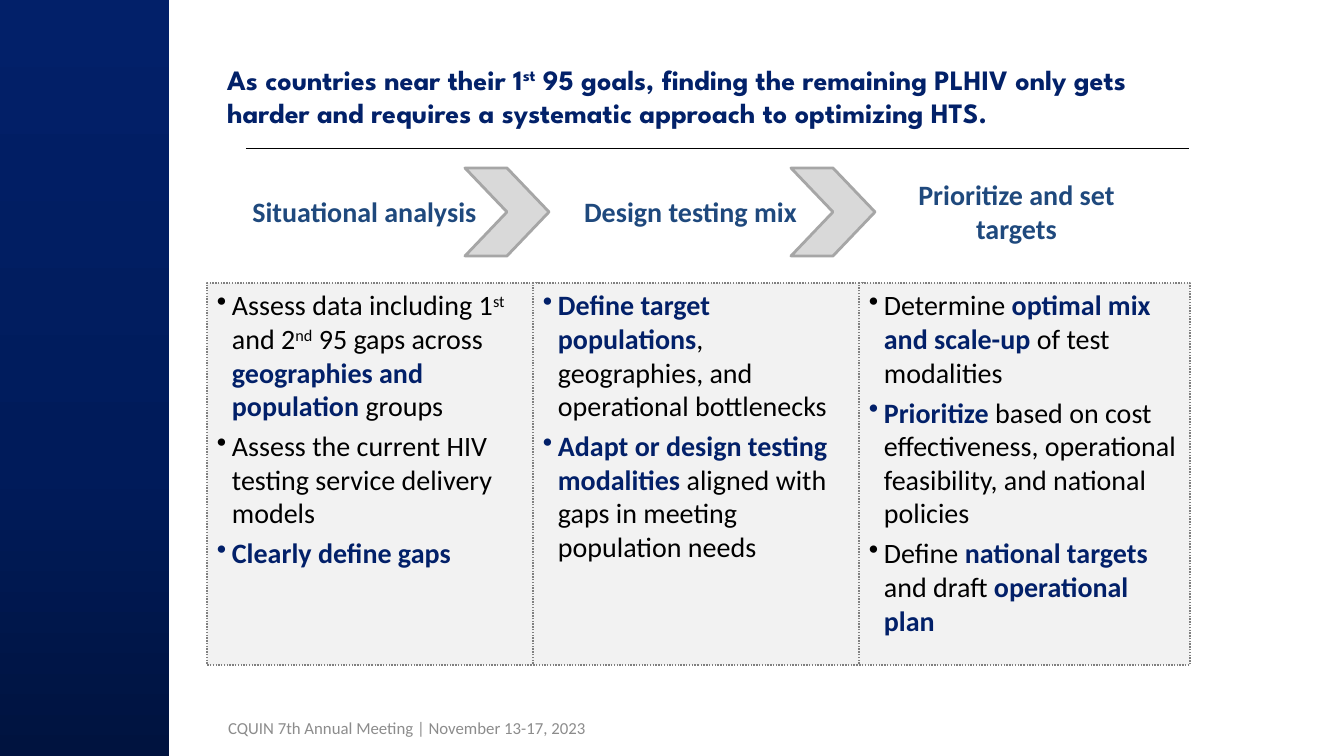
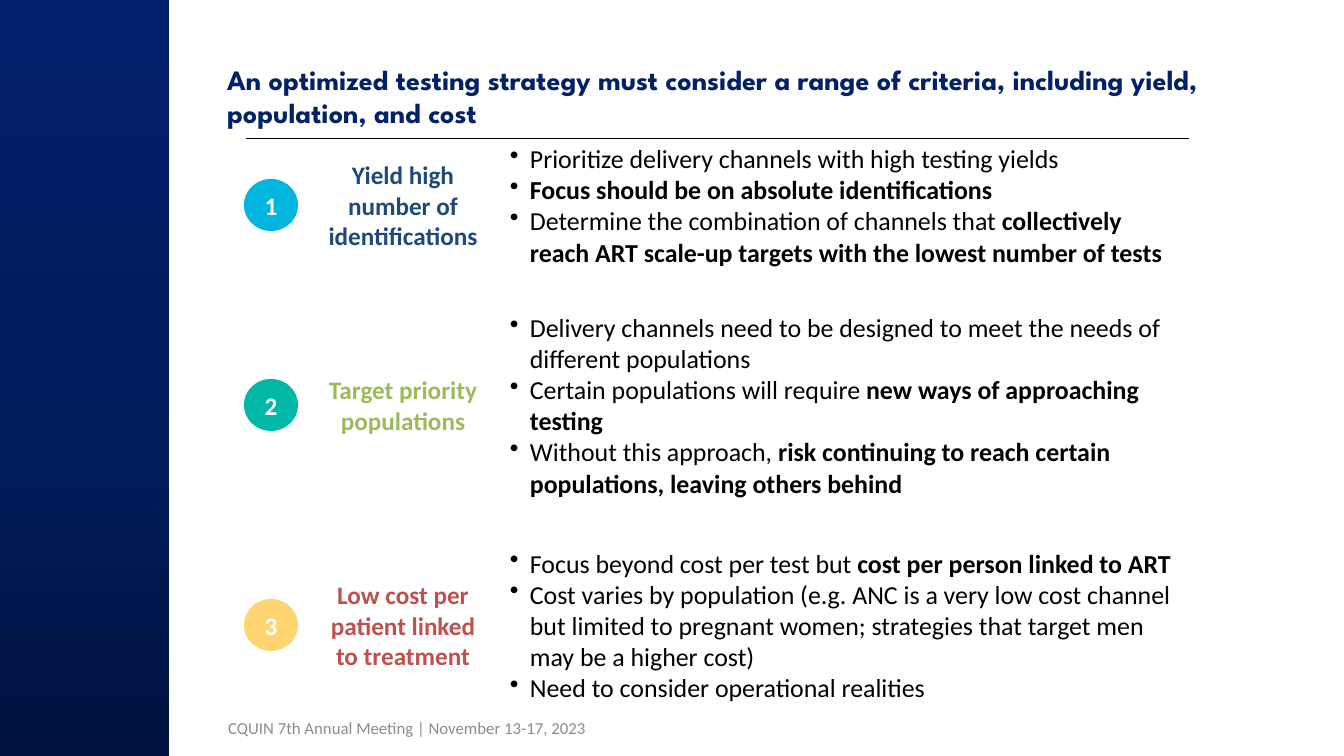
from copy import deepcopy

from lxml import etree
from pptx import Presentation
from pptx.dml.color import RGBColor
from pptx.enum.dml import MSO_LINE
from pptx.enum.shapes import MSO_CONNECTOR, MSO_SHAPE
from pptx.enum.text import MSO_ANCHOR, MSO_AUTO_SIZE, PP_ALIGN
from pptx.oxml.ns import qn
from pptx.util import Emu, Pt

RECT, CHEVRON, OVAL = MSO_SHAPE.RECTANGLE, MSO_SHAPE.CHEVRON, MSO_SHAPE.OVAL
TOP, MIDDLE = MSO_ANCHOR.TOP, MSO_ANCHOR.MIDDLE
LEFT, CENTER = PP_ALIGN.LEFT, PP_ALIGN.CENTER

PX = 914400 / 100.8  # EMU in one px

NAVY = RGBColor(0x02, 0x20, 0x69)
TITLE_NAVY = RGBColor(0x02, 0x21, 0x69)
BAND_STOPS = [(0, RGBColor(0x00, 0x13, 0x3F)), (0.38, RGBColor(0x00, 0x1B, 0x5A)), (1, NAVY)]
BLACK = RGBColor(0x00, 0x00, 0x00)
WHITE = RGBColor(0xFF, 0xFF, 0xFF)
FOOTER_GREY = RGBColor(0x8C, 0x8C, 0x8C)
HEADING_BLUE = RGBColor(0x1F, 0x49, 0x7D)
PANEL_FILL = RGBColor(0xF2, 0xF2, 0xF2)
PANEL_LINE = RGBColor(0x80, 0x80, 0x80)
CHEVRON_FILL = RGBColor(0xD9, 0xD9, 0xD9)
CHEVRON_LINE = RGBColor(0xA6, 0xA6, 0xA6)
CYAN = RGBColor(0x00, 0xB5, 0xDE)
TEAL = RGBColor(0x00, 0xB8, 0xA5)
YELLOW = RGBColor(0xFE, 0xD5, 0x71)
GREEN = RGBColor(0x9B, 0xBB, 0x59)
RED = RGBColor(0xC0, 0x50, 0x4D)

BODY_FONT, TITLE_FONT = "Calibri", "League Spartan"
FOOTER = "CQUIN 7th Annual Meeting | November 13-17, 2023"
STRONG, SUPER = "strong", "super"


def add_box(s, kind, x, y, w, h, fill=None, line=None, width=1):
    """Add a preset shape, or a text box when kind is None; lengths in px."""
    place = [Emu(round(v * PX)) for v in (x, y, w, h)]
    if kind is None:
        return s.shapes.add_textbox(*place)
    sp = s.shapes.add_shape(kind, *place)
    sp.shadow.inherit = False
    if fill is not None:
        sp.fill.solid()
        sp.fill.fore_color.rgb = fill
    if line is None:
        sp.line.fill.background()
    else:
        sp.line.color.rgb = line
        sp.line.width = Pt(width)
    return sp


def write(sp, paragraphs, size, color, strong=None, bold=False, font=BODY_FONT,
          align=CENTER, anchor=MIDDLE, indent=0, after=0):
    """Fill a shape; a paragraph lists strings or (string, STRONG or SUPER)."""
    tf = sp.text_frame
    tf.word_wrap = True
    tf.auto_size = MSO_AUTO_SIZE.NONE
    tf.vertical_anchor = anchor
    for i, parts in enumerate(paragraphs):
        p = tf.paragraphs[0] if i == 0 else tf.add_paragraph()
        p.alignment = align
        if indent:
            pPr = p._p.get_or_add_pPr()
            pPr.set("marL", str(round(indent * PX)))
            pPr.set("indent", str(-round(indent * PX)))
            etree.SubElement(pPr, qn("a:buChar")).set("char", "•")
        if after:
            p.space_after = Pt(after)
        for part in parts:
            text, style = part if isinstance(part, tuple) else (part, None)
            r = p.add_run()
            r.text = text
            r.font.name = font
            r.font.size = Pt(size)
            r.font.bold = bold or style == STRONG
            r.font.color.rgb = strong if style == STRONG else color
            if style == SUPER:
                r._r.get_or_add_rPr().set("baseline", "30000")


prs = Presentation()
prs.slide_width, prs.slide_height = Emu(round(1344 * PX)), Emu(round(756 * PX))

# Shared frame: title, side band, footer and rule
titles = [
    (["As countries near their 1", ("st", SUPER), " 95 goals, finding the remaining PLHIV "
      "only gets harder and requires a systematic approach to optimizing HTS."], 149),
    (["An optimized testing strategy must consider a range of criteria, including yield, "
      "population, and cost"], 139),
]
slides = []
for title, rule_y in titles:
    s = prs.slides.add_slide(prs.slide_layouts[5])
    slides.append(s)

    sp = s.shapes.title
    sp.left, sp.top, sp.width, sp.height = [Emu(round(v * PX)) for v in (217, 57, 1008, 93)]
    write(sp, [title], 20, TITLE_NAVY, bold=True, font=TITLE_FONT, align=LEFT, anchor=TOP)

    band = add_box(s, RECT, 0, 0, 169, 756)
    band.fill.gradient()
    band.fill.gradient_angle = 90
    stop_list = band._element.spPr.find(".//" + qn("a:gsLst"))
    stop_list.insert(1, deepcopy(stop_list[0]))
    for stop, (position, color) in zip(band.fill.gradient_stops, BAND_STOPS):
        stop.position = position
        stop.color.rgb = color

    write(add_box(s, None, 59, 708, 696, 40), [[FOOTER]], 12, FOOTER_GREY)

    ends = [Emu(round(v * PX)) for v in (246, rule_y, 1189, rule_y)]
    rule = s.shapes.add_connector(MSO_CONNECTOR.STRAIGHT, *ends)
    rule.line.color.rgb = BLACK
    rule.line.width = Pt(0.75)
    etree.SubElement(rule._element.spPr, qn("a:effectLst"))

# Slide 1: three steps, each a heading over a panel
steps = [
    ("Situational analysis", [
        ["Assess data including 1", ("st", SUPER), " and 2", ("nd", SUPER), " 95 gaps across ",
         ("geographies and population", STRONG), " groups"],
        ["Assess the current HIV testing service delivery models"],
        [("Clearly define gaps", STRONG)],
    ]),
    ("Design testing mix", [
        [("Define target populations", STRONG), ", geographies, and operational bottlenecks"],
        [("Adapt or design testing modalities ", STRONG),
         "aligned with gaps in meeting population needs"],
    ]),
    ("Prioritize and set targets", [
        ["Determine ", ("optimal mix and scale-up ", STRONG), "of test modalities"],
        [("Prioritize", STRONG),
         " based on cost effectiveness, operational feasibility, and national policies"],
        ["Define ", ("national targets ", STRONG), "and draft ", ("operational plan", STRONG)],
    ]),
]
STEP_PITCH = 326
s = slides[0]
for i, (heading, bullets) in enumerate(steps):
    x = 207 + i * STEP_PITCH
    if i < len(steps) - 1:
        add_box(s, CHEVRON, x + 258, 168, 84, 88, CHEVRON_FILL, CHEVRON_LINE, 2)
    write(add_box(s, None, x + 28, 172, 259, 78), [[heading]], 20, HEADING_BLUE, bold=True)
    panel = add_box(s, RECT, x, 283, 331, 382, PANEL_FILL, PANEL_LINE)
    panel.line.dash_style = MSO_LINE.ROUND_DOT
    write(panel, bullets, 20, BLACK, strong=NAVY, align=LEFT, anchor=TOP, indent=15, after=4.5)

# Slide 2: three numbered criteria, each centred on its row
criteria = [
    (205, CYAN, HEADING_BLUE, "Yield high number of identifications", [
        ["Prioritize delivery channels with high testing yields"],
        [("Focus should be on absolute identifications", STRONG)],
        ["Determine the combination of channels that ",
         ("collectively reach ART scale-up targets with the lowest number of tests", STRONG)],
    ]),
    (405, TEAL, GREEN, "Target priority populations", [
        ["Delivery channels need to be designed to meet the needs of different populations"],
        ["Certain populations will require ", ("new ways of approaching testing", STRONG)],
        ["Without this approach,",
         (" risk continuing to reach certain populations, leaving others behind", STRONG)],
    ]),
    (625, YELLOW, RED, "Low cost per patient linked to treatment", [
        ["Focus beyond cost per test but ", ("cost per person linked to ART", STRONG)],
        ["Cost varies by population (e.g. ANC is a very low cost channel but limited to "
         "pregnant women; strategies that target men may be a higher cost)"],
        ["Need to consider operational realities"],
    ]),
]
ROW_H = 162
s = slides[1]
for number, (mid, badge_fill, label_color, label, bullets) in enumerate(criteria, 1):
    badge = add_box(s, OVAL, 244, mid - 26, 54, 52, badge_fill)
    write(badge, [[str(number)]], 18, WHITE, bold=True)
    y = mid - ROW_H // 2
    write(add_box(s, None, 310, y, 186, ROW_H), [[label]], 18, label_color, bold=True)
    write(add_box(s, None, 500, y, 683, ROW_H), bullets, 18.5, BLACK, strong=BLACK,
          align=LEFT, indent=20)

prs.save("out.pptx")
